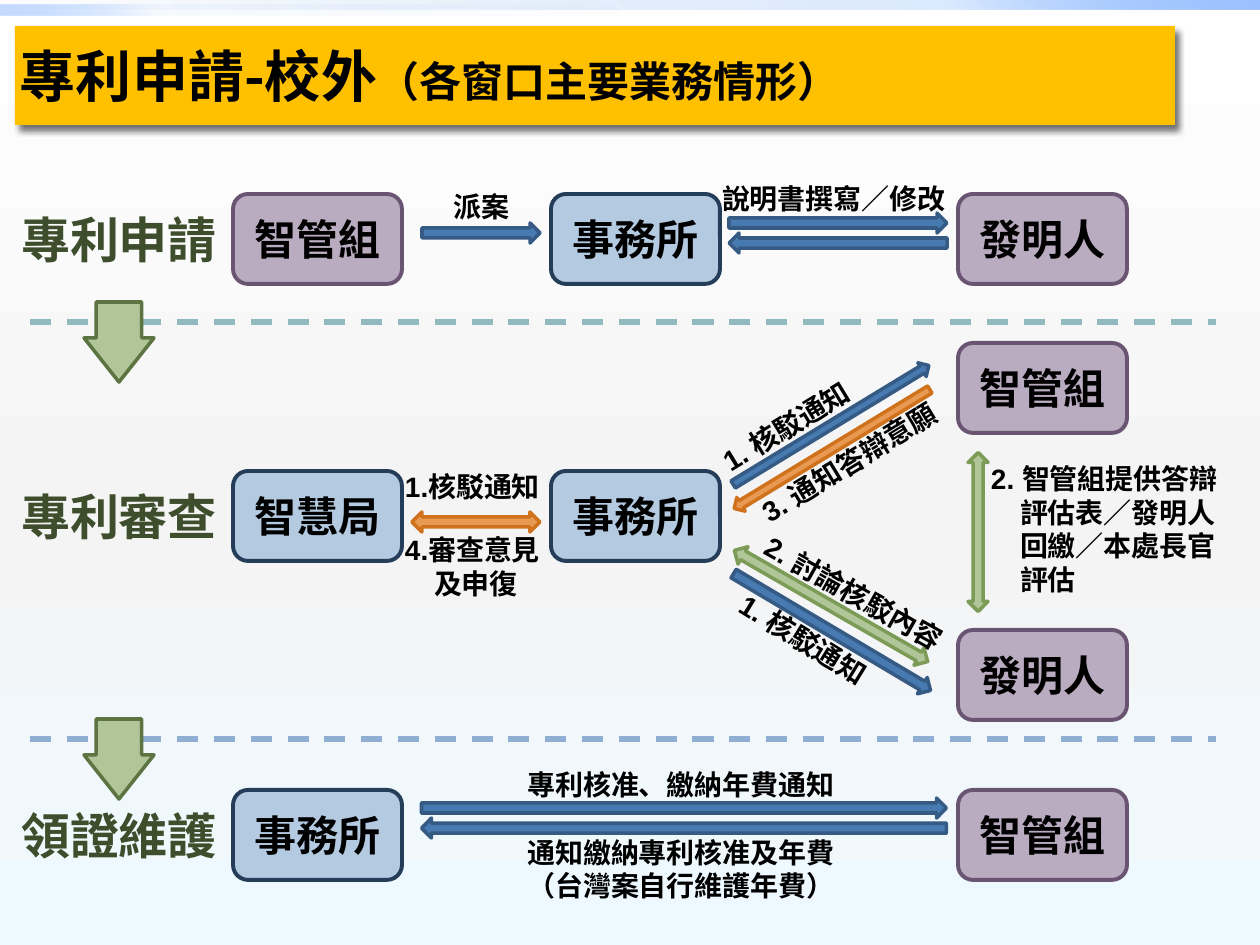
from dataclasses import dataclass

from lxml.etree import SubElement
from pptx import Presentation
from pptx.dml.color import RGBColor
from pptx.enum.dml import MSO_LINE
from pptx.enum.shapes import MSO_CONNECTOR, MSO_SHAPE as Preset
from pptx.enum.text import MSO_ANCHOR as Anchor, MSO_AUTO_SIZE, PP_ALIGN as Align
from pptx.oxml.ns import qn
from pptx.util import Pt

EMU_PER_PX = 914400 / 126


def px(value):
    return round(value * EMU_PER_PX)


@dataclass(frozen=True)
class Theme:
    cjk: str = "Noto Sans CJK SC"
    latin: str = "Arial"
    ink: str = "000000"
    banner: str = "FFC000"
    stage: str = "3E4E2C"
    # Fill and line pairs
    office: tuple = ("B4CAE1", "243D58")
    school: tuple = ("B9ABC0", "695572")
    blue: tuple = ("477AB1", "355A83")
    orange: tuple = ("E89A53", "D0721C")
    green: tuple = ("B0C598", "7B9B57")
    step: tuple = ("B0C598", "5C7441")
    dividers: tuple = ("91B9C0", "8FAFD2")
    # Type sizes
    title: int = 32
    subtitle: int = 24
    heading: int = 28
    node: int = 24
    label: int = 16


class SlideBuilder:
    def __init__(self, slide, theme):
        self.slide = slide
        self.theme = theme

    def place(self, shape, box):
        for name, value in zip(("left", "top", "width", "height"), box):
            setattr(shape, name, px(value))

    def gradient(self, fill, root, stops, angle):
        fill.gradient()
        fill.gradient_angle = (360 - angle) % 360
        stop_list = root.xpath(".//a:gsLst")[0]
        for stop in list(stop_list):
            stop_list.remove(stop)
        for position, color, alpha in stops:
            stop = SubElement(stop_list, qn("a:gs"), pos=str(position * 1000))
            tint = SubElement(stop, qn("a:srgbClr"), val=color)
            if alpha < 100:
                SubElement(tint, qn("a:alpha"), val=str(alpha * 1000))

    def background(self, stops, angle):
        self.gradient(self.slide.background.fill, self.slide._element, stops, angle)

    def format_font(self, run, size, color, latin):
        values = {"size": Pt(size), "bold": True, "name": latin}
        for name, value in values.items():
            setattr(run.font, name, value)
        run.font.color.rgb = RGBColor.from_string(color)
        SubElement(run._r.get_or_add_rPr(), qn("a:ea"), typeface=self.theme.cjk)

    def fill_text(self, shape, pieces, color=None, latin=None, align=Align.CENTER,
                  anchor=Anchor.MIDDLE, margins=(13, 6), hanging=0):
        frame = shape.text_frame
        values = {"word_wrap": True, "auto_size": MSO_AUTO_SIZE.NONE,
                  "vertical_anchor": anchor,
                  "margin_left": px(margins[0]), "margin_right": px(margins[0]),
                  "margin_top": px(margins[1]), "margin_bottom": px(margins[1])}
        for name, value in values.items():
            setattr(frame, name, value)
        paragraph = frame.paragraphs[0]
        paragraph.alignment = align
        if hanging:
            properties = paragraph._p.get_or_add_pPr()
            properties.set("marL", str(px(hanging)))
            properties.set("indent", str(-px(hanging)))
        for text, size in pieces:
            for number, line in enumerate(text.split("\n")):
                if number:
                    paragraph.add_line_break()
                run = paragraph.add_run()
                run.text = line
                self.format_font(run, size, color or self.theme.ink, latin or self.theme.cjk)

    def title(self, box, pieces):
        shape = self.slide.shapes.title
        self.place(shape, box)
        properties = shape._element.spPr
        geometry = SubElement(properties, qn("a:prstGeom"), prst="roundRect")
        SubElement(geometry, qn("a:avLst"))
        shape.fill.solid()
        shape.fill.fore_color.rgb = RGBColor.from_string(self.theme.banner)
        shape.line.fill.background()
        effects = SubElement(properties, qn("a:effectLst"))
        shadow = SubElement(effects, qn("a:outerShdw"), blurRad=str(Pt(3.5)),
                            dist=str(Pt(4)), dir=str(55 * 60000), rotWithShape="0")
        tint = SubElement(shadow, qn("a:srgbClr"), val="000000")
        SubElement(tint, qn("a:alpha"), val="55000")
        self.fill_text(shape, pieces, align=Align.LEFT, margins=(5, 6))

    def shape(self, preset, box, colors, width=2, rotation=0, adjustments=()):
        shape = self.slide.shapes.add_shape(preset, *map(px, box))
        shape.shadow.inherit = False
        shape.rotation = rotation
        for index, value in enumerate(adjustments):
            shape.adjustments[index] = value
        fill, line = colors
        shape.fill.solid()
        shape.fill.fore_color.rgb = RGBColor.from_string(fill)
        shape.line.color.rgb = RGBColor.from_string(line)
        shape.line.width = Pt(width)
        return shape

    def strip(self, box, stops, angle):
        shape = self.slide.shapes.add_shape(Preset.RECTANGLE, *map(px, box))
        shape.shadow.inherit = False
        shape.line.fill.background()
        self.gradient(shape.fill, shape._element, stops, angle)

    def divider(self, y, color):
        line = self.slide.shapes.add_connector(
            MSO_CONNECTOR.STRAIGHT, px(30), px(y), px(1216), px(y))
        line.line.color.rgb = RGBColor.from_string(color)
        line.line.width = Pt(3)
        line.line.dash_style = MSO_LINE.DASH
        SubElement(line._element.spPr, qn("a:effectLst"))

    def node(self, left, top, text, colors):
        shape = self.shape(Preset.ROUNDED_RECTANGLE, (left, top, 169, 90), colors, 2.25)
        self.fill_text(shape, [(text, self.theme.node)])

    def arrow(self, center, length, rotation, colors, thickness=20, shaft=0.5):
        x, y = center
        box = (x - thickness / 2, y - length / 2, thickness, length)
        self.shape(Preset.UP_ARROW, box, colors, 2, rotation, (shaft, 0.5))

    def double_arrow(self, center, length, rotation, colors):
        x, y = center
        self.shape(Preset.LEFT_RIGHT_ARROW, (x - length / 2, y - 10, length, 20),
                   colors, 2, rotation)

    def text(self, box, text, size, rotation=0, **style):
        shape = self.slide.shapes.add_textbox(*map(px, box))
        shape.rotation = rotation
        self.fill_text(shape, [(text, size)], **style)


def main():
    presentation = Presentation()
    presentation.slide_width, presentation.slide_height = px(1260), px(945)
    theme = Theme()
    slide = presentation.slides.add_slide(presentation.slide_layouts[5])
    builder = SlideBuilder(slide, theme)

    # Background and top strips
    builder.background([(0, "FFFFFF", 100), (55, "F4F4F4", 100), (100, "EEF9FF", 100)], 90)
    builder.strip((0, 0, 1260, 10),
                  [(0, "0058B7", 0), (75, "4F95FF", 20), (100, "9EC2FF", 100)], 315)
    builder.strip((0, 5, 630, 10),
                  [(0, "0058B7", 0), (75, "4F95FF", 5), (100, "9EC2FF", 60)], 135)
    builder.title((15, 26, 1160, 99),
                  [("專利申請-校外", theme.title), ("（各窗口主要業務情形）", theme.subtitle)])

    # Stages, dividers and step arrows
    for top, name in ((184, "專利申請"), (461, "專利審查"), (780, "領證維護")):
        builder.text((15, top, 208, 110), name, theme.heading,
                     color=theme.stage, margins=(0, 0))
    for y, color in zip((322, 739), theme.dividers):
        builder.divider(y, color)
        builder.shape(Preset.DOWN_ARROW, (84, y - 20, 70, 80), theme.step,
                      adjustments=(0.65, 0.63))

    # Parties
    left, middle, right = 233, 551, 958
    for x, y, name, colors in (
            (left, 194, "智管組", theme.school), (middle, 194, "事務所", theme.office),
            (right, 194, "發明人", theme.school), (left, 471, "智慧局", theme.office),
            (middle, 471, "事務所", theme.office), (right, 343, "智管組", theme.school),
            (right, 630, "發明人", theme.school), (left, 790, "事務所", theme.office),
            (right, 790, "智管組", theme.school)):
        builder.node(x, y, name, colors)

    # Level arrows
    for center, length, rotation in (
            ((481, 233), 118, 90), ((838, 223), 218, 90), ((838, 243), 218, 270),
            ((684, 808), 525, 90), ((684, 828), 525, 270)):
        builder.arrow(center, length, rotation, theme.blue)

    # Slanted and two-way arrows
    for center, rotation, colors, thickness in (
            ((831, 425), 58.7, theme.blue, 16), ((832, 449), 238.7, theme.orange, 16),
            ((832, 632), 120.7, theme.blue, 19)):
        builder.arrow(center, 229, rotation, colors, thickness, 0.52)
    builder.double_arrow((831, 606), 223, 29.9, theme.green)
    builder.double_arrow((978, 532), 159, 90, theme.green)
    builder.double_arrow((476, 522), 128, 0, theme.orange)

    # Plain labels
    for box, text, align in (
            ((441, 184, 100, 47), "派案", Align.LEFT),
            ((709, 176, 258, 47), "說明書撰寫／修改", Align.LEFT),
            ((512, 762, 338, 47), "專利核准、繳納年費通知", Align.CENTER),
            ((512, 829, 338, 81), "通知繳納專利核准及年費（台灣案自行維護年費）", Align.CENTER)):
        builder.text(box, text, theme.label, align=align, anchor=Anchor.TOP)

    # Slanted labels
    for box, text, rotation in (
            ((698, 404, 176, 44), "1. 核駁通知", 328.7),
            ((733, 440, 232, 44), "3. 通知答辯意願", 328.7),
            ((737, 571, 234, 44), "2. 討論核駁內容", 29.4),
            ((706, 617, 195, 44), "1. 核駁通知", 31.5)):
        builder.text(box, text, theme.label, rotation, latin=theme.latin)

    # Numbered notes
    for box, text in (
            ((392, 462, 258, 49), "1.核駁通知"),
            ((392, 532, 258, 69), "4.審查意見\n及申復"),
            ((978, 455, 258, 148), "2. 智管組提供答辯評估表／發明人回繳／本處長官評估")):
        builder.text(box, text, theme.label, latin=theme.latin, align=Align.LEFT, hanging=29)

    presentation.save("out.pptx")


if __name__ == "__main__":
    main()
